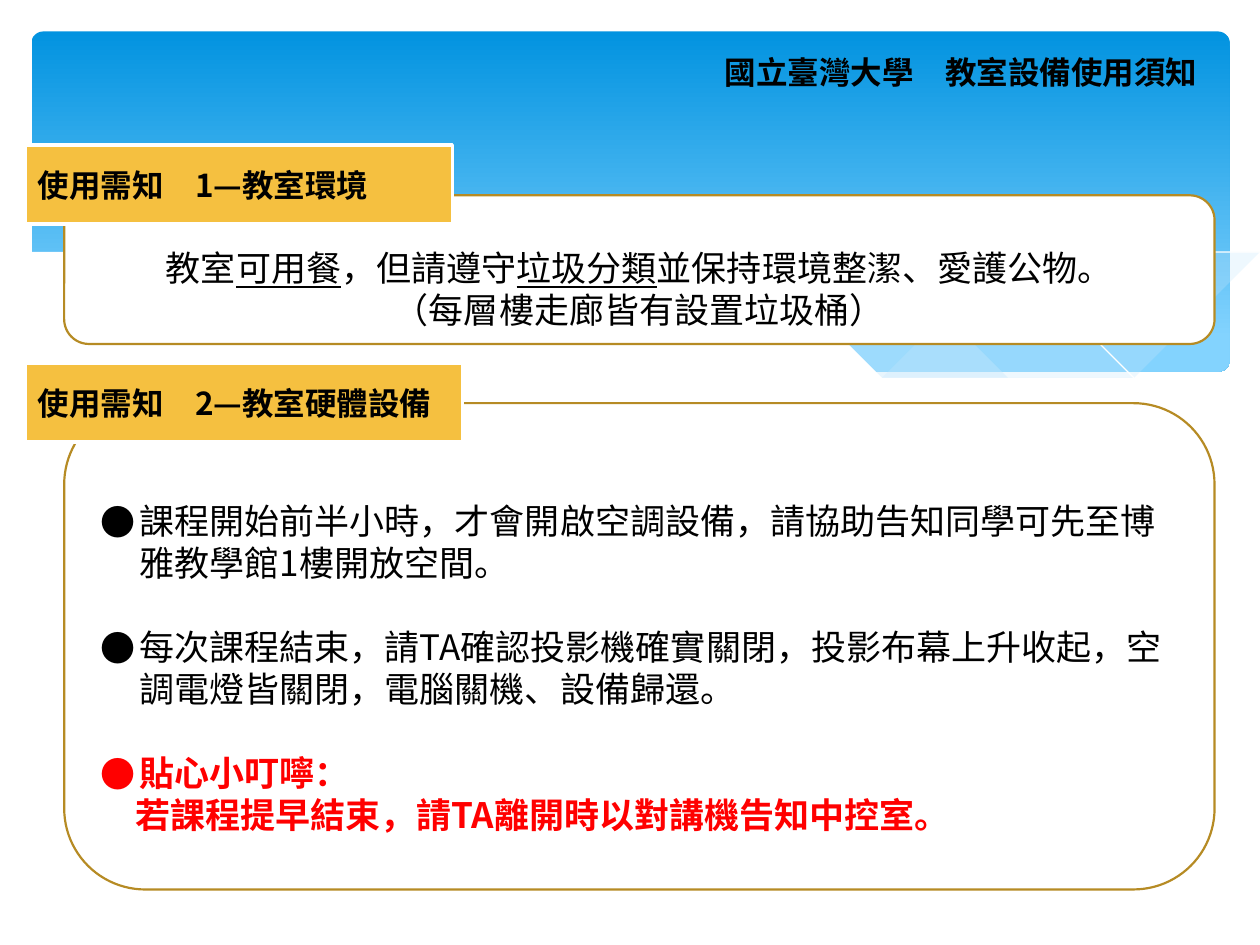
from dataclasses import dataclass
from typing import Optional

from lxml.etree import SubElement as Sub
from pptx import Presentation
from pptx.dml.color import RGBColor as Rgb
from pptx.enum.shapes import MSO_SHAPE as Kind
from pptx.enum.text import MSO_ANCHOR as Anchor, PP_ALIGN as Align
from pptx.oxml.ns import qn
from pptx.util import Inches, Pt


@dataclass(frozen=True)
class Theme:
    font: str = "Noto Sans CJK SC"
    ink: str = "000000"
    red: str = "FF0000"
    white: str = "FFFFFF"
    gold: str = "F5C040"
    edge: str = "B68B24"
    sky: str = "0293E0"
    pale: str = "83D3FE"
    mist: str = "C6E7FC"
    head: int = 18
    body: int = 20


@dataclass(frozen=True)
class Wave:
    pts: tuple
    fill: Optional[str] = None
    alpha: int = 100


@dataclass(frozen=True)
class Span:
    text: str
    line: bool = False


@dataclass(frozen=True)
class Para:
    spans: tuple
    color: str
    bold: bool = False
    align: Align = Align.LEFT
    bullet: bool = False
    left: float = 0
    gap: int = 0


@dataclass(frozen=True)
class Panel:
    box: tuple
    tag: tuple
    title: str
    drop: float
    paras: tuple


T = Theme()

WAVES = (
    Wave(((9.76, 2), (9.48, 2.04), (9.06, 2.13), (8.61, 2.23), (8.05, 2.37),
          (7.29, 2.53), (6.61, 2.65), (7.05, 2.71), (7.57, 2.76), (8.03, 2.78),
          (8.54, 2.76), (8.97, 2.7), (9.35, 2.62), (9.76, 2.47)), T.mist, 29),
    Wave(((8.93, 2.73), (8.37, 2.65), (7.75, 2.54), (7.06, 2.4), (6.29, 2.22),
          (5.69, 2.08), (5.14, 1.98), (4.65, 1.91), (4.2, 1.87), (3.61, 1.85),
          (3.13, 1.88), (2.86, 1.91), (3.42, 1.99), (4.04, 2.11), (4.91, 2.32),
          (5.66, 2.48), (6.34, 2.61), (6.95, 2.7), (7.48, 2.76), (8.07, 2.78),
          (8.57, 2.77)), T.mist, 40),
    Wave(((3.09, 1.95), (3.44, 1.9), (4.01, 1.87), (4.69, 1.89), (5.33, 1.94),
          (6.08, 2.04), (6.95, 2.19), (7.95, 2.41), (9.07, 2.72))),
    Wave(((6.13, 2.57), (6.72, 2.41), (7.48, 2.23), (8.36, 2.04), (8.95, 1.94),
          (9.38, 1.88), (9.75, 1.85))),
    Wave(((9.77, 2.46), (9.5, 2.56), (9.1, 2.67), (8.63, 2.74), (8.09, 2.77),
          (7.44, 2.74), (6.68, 2.65), (5.79, 2.5), (5.03, 2.33), (4.47, 2.2),
          (3.65, 2.02), (2.92, 1.9), (2.3, 1.85), (1.77, 1.84), (1.32, 1.86),
          (0.95, 1.91), (0.67, 1.97), (0.46, 2.03), (0.29, 2.1), (0.23, 2.13),
          (0.23, 3.29), (9.77, 3.29)), T.white),
)

PANELS = (
    Panel((0.51, 1.55, 9.13, 1.18), (0.2, 1.15, 3.39, 0.63),
          "使用需知　1—教室環境", 0.3, (
        Para((Span("教室"), Span("可用餐", True), Span("，但請遵守"),
              Span("垃圾分類", True), Span("並保持環境整潔、愛護公物。")),
             T.ink, align=Align.CENTER),
        Para((Span("（每層樓走廊皆有設置垃圾桶）"),), T.ink, align=Align.CENTER))),
    Panel((0.51, 3.2, 9.13, 3.86), (0.2, 2.88, 3.47, 0.63),
          "使用需知　2—教室硬體設備", 0.33, (
        Para((Span("課程開始前半小時，才會開啟空調設備，請協助告知同學可先至博雅教學館1樓開放空間。"),),
             T.ink, bullet=True, left=0.31),
        Para((Span("每次課程結束，請TA確認投影機確實關閉，投影布幕上升收起，空調電燈皆關閉，電腦關機、設備歸還。"),),
             T.ink, bullet=True, left=0.31, gap=24),
        Para((Span("貼心小叮嚀："),), T.red, True, bullet=True, left=0.31, gap=24),
        Para((Span("若課程提早結束，請TA離開時以對講機告知中控室。"),), T.red, True,
             left=0.28))),
)


def style(run, size: int, color: str, bold: bool) -> None:
    """Set the font of a run for Latin and East Asian text."""
    font = run.font
    font.size, font.bold, font.name = Pt(size), bold, T.font
    font.color.rgb = Rgb.from_string(color)
    Sub(run._r.get_or_add_rPr(), qn("a:ea"), typeface=T.font)


def paint(shape, fill: Optional[str], edge: Optional[str], width: float = 0) -> None:
    """Set a flat fill and an outline without shadow."""
    shape.shadow.inherit = False
    if fill:
        shape.fill.solid()
        shape.fill.fore_color.rgb = Rgb.from_string(fill)
    else:
        shape.fill.background()
    if edge:
        shape.line.color.rgb = Rgb.from_string(edge)
        shape.line.width = Pt(width)
    else:
        shape.line.fill.background()


def block(slide, kind: Kind, box: tuple, fill: str, edge: Optional[str] = None,
          width: float = 0):
    """Add a preset shape."""
    shape = slide.shapes.add_shape(kind, *map(Inches, box))
    paint(shape, fill, edge, width)
    return shape


def banner(slide) -> None:
    """Draw the sky panel behind the heading."""
    shape = block(slide, Kind.ROUNDED_RECTANGLE, (0.25, 0.25, 9.51, 2.7), T.sky)
    shape.adjustments[0] = 0.034
    shape.fill.gradient()
    shape.fill.gradient_angle = 270
    for stop, color, spot in zip(shape.fill.gradient_stops, (T.sky, T.pale), (0, 0.9)):
        stop.color.rgb = Rgb.from_string(color)
        stop.position = spot


def ripple(slide, wave: Wave) -> None:
    """Draw one wave as a filled area or a hairline."""
    start, *rest = wave.pts
    pen = slide.shapes.build_freeform(*start, scale=Inches(1))
    pen.add_line_segments(rest, close=bool(wave.fill))
    shape = pen.convert_to_shape()
    paint(shape, wave.fill, None if wave.fill else T.white)
    if wave.alpha < 100:
        tint = shape._element.spPr.find(qn("a:solidFill"))[0]
        Sub(tint, qn("a:alpha"), val=str(wave.alpha * 1000))


def label(shape, text: str, align: Align) -> None:
    """Write one bold line in a shape."""
    frame = shape.text_frame
    frame.text, frame.word_wrap = text, True
    frame.vertical_anchor = Anchor.MIDDLE
    para = frame.paragraphs[0]
    para.alignment = align
    style(para.runs[0], T.head, T.ink, True)


def write(para, item: Para) -> None:
    """Fill a paragraph with its bullet and spans."""
    para.alignment = item.align
    if item.gap:
        para.space_before = Pt(item.gap)
    props = para._p.get_or_add_pPr()
    props.set("marL", str(Inches(item.left)))
    if item.bullet:
        props.set("indent", str(-Inches(item.left)))
        Sub(props, qn("a:buFont"), typeface=T.font)
        Sub(props, qn("a:buChar"), char="●")
    for span in item.spans:
        run = para.add_run()
        run.text = span.text
        style(run, T.body, item.color, item.bold)
        run.font.underline = span.line


def panel(slide, item: Panel) -> None:
    """Draw a rounded card with its tag."""
    card = block(slide, Kind.ROUNDED_RECTANGLE, item.box, T.white, T.edge, 1.25)
    frame = card.text_frame
    frame.word_wrap, frame.vertical_anchor = True, Anchor.MIDDLE
    frame.margin_top = Inches(0.05 + item.drop)
    for i, para in enumerate(item.paras):
        write(frame.add_paragraph() if i else frame.paragraphs[0], para)
    tag = block(slide, Kind.RECTANGLE, item.tag, T.gold, T.white, 2)
    label(tag, item.title, Align.LEFT)


def main() -> None:
    """Build the slide and save it."""
    deck = Presentation()
    deck.slide_width, deck.slide_height = Inches(10), Inches(7.5)
    slide = deck.slides.add_slide(deck.slide_layouts[5])
    banner(slide)
    for wave in WAVES:
        ripple(slide, wave)
    title = slide.shapes.title
    title.left, title.top, title.width, title.height = map(Inches, (5.55, 0.36, 4.05, 0.42))
    label(title, "國立臺灣大學　教室設備使用須知", Align.RIGHT)
    slide.shapes._spTree.append(title._element)
    for item in PANELS:
        panel(slide, item)
    deck.save("out.pptx")


if __name__ == "__main__":
    main()
